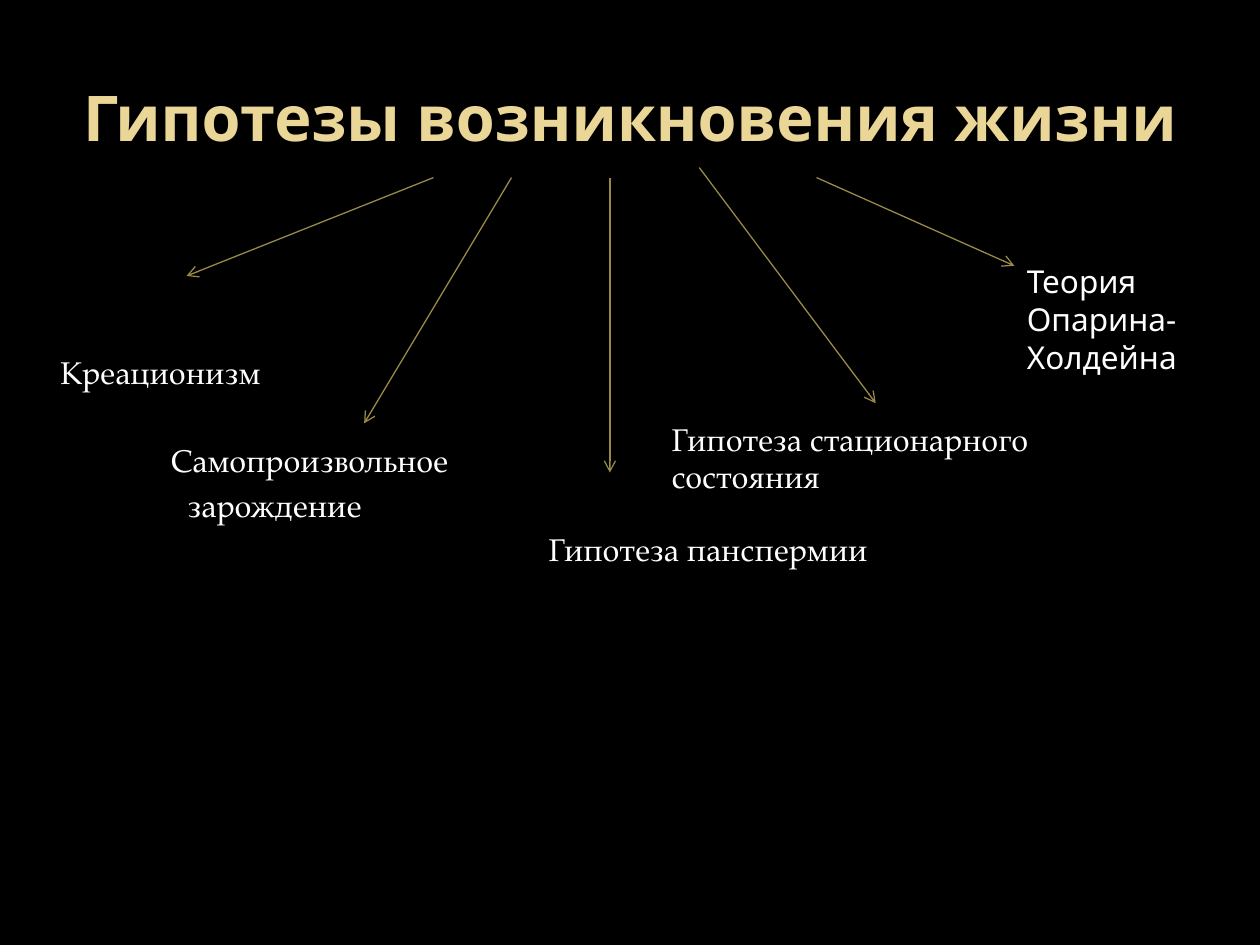
from lxml import etree
from pptx import Presentation
from pptx.dml.color import RGBColor
from pptx.enum.shapes import MSO_CONNECTOR
from pptx.enum.text import MSO_ANCHOR, PP_ALIGN
from pptx.oxml.ns import qn
from pptx.util import Pt

STRAIGHT = MSO_CONNECTOR.STRAIGHT
MIDDLE = MSO_ANCHOR.MIDDLE
CENTER = PP_ALIGN.CENTER

THEME = {
    "background": RGBColor(0x00, 0x00, 0x00),
    "title": RGBColor(0xEA, 0xD6, 0x96),
    "text": RGBColor(0xFF, 0xFF, 0xFF),
    "arrow": RGBColor(0x99, 0x89, 0x46),
    "sans": "Noto Sans",
    "serif": "TeX Gyre Pagella",
    "title_size": Pt(36),
    "label_size": Pt(18),
    "arrow_width": Pt(0.75),
}

TITLE = "Гипотезы возникновения жизни"
TITLE_BOX = (36, 21.6, 648, 90)

# Paragraphs, font, and left, top, width, height in points
LABELS = [
    (["Креационизм"], "serif", (34.5, 202, 130, 24)),
    (["Самопроизвольное", "зарождение"], "serif", (97.5, 252.3, 180, 50)),
    (["Гипотеза панспермии"], "serif", (313.5, 302.6, 210, 24)),
    (["Гипотеза стационарного состояния"], "serif", (383.8, 239.8, 215, 46)),
    (["Теория Опарина-Холдейна"], "sans", (586.8, 149.8, 92.5, 66)),
]
SECOND_LINE_INDENT = Pt(9.5)
SECOND_LINE_SPACE = Pt(3.6)

# Start and end of each arrow in points
ARROWS = [
    ((247.7, 101.5), (106.6, 157.7)),
    ((292.3, 101.5), (208.1, 241.9)),
    ((348.5, 101.5), (348.5, 270)),
    ((399.6, 95.8), (500.4, 230.4)),
    ((466.6, 101.5), (579.6, 151.9)),
]


def set_font(paragraph, family, size, color, bold=False):
    paragraph.font.name = THEME[family]
    paragraph.font.size = size
    paragraph.font.color.rgb = color
    paragraph.font.bold = bold


def add_title(slide):
    title = slide.shapes.title
    title.left, title.top, title.width, title.height = map(Pt, TITLE_BOX)
    title.text_frame.text = TITLE
    title.text_frame.word_wrap = True
    title.text_frame.vertical_anchor = MIDDLE
    paragraph = title.text_frame.paragraphs[0]
    paragraph.alignment = CENTER
    set_font(paragraph, "sans", THEME["title_size"], THEME["title"], bold=True)


def add_label(slide, lines, family, box):
    frame = slide.shapes.add_textbox(*map(Pt, box)).text_frame
    frame.word_wrap = True
    frame.margin_left = frame.margin_right = 0
    frame.margin_top = frame.margin_bottom = 0
    frame.text = "\n".join(lines)
    for paragraph in frame.paragraphs:
        set_font(paragraph, family, THEME["label_size"], THEME["text"])
    for paragraph in frame.paragraphs[1:]:
        paragraph.space_before = SECOND_LINE_SPACE
        paragraph._p.get_or_add_pPr().set("marL", str(SECOND_LINE_INDENT))


def add_arrow(slide, start, end):
    arrow = slide.shapes.add_connector(STRAIGHT, *map(Pt, start + end))
    arrow.line.color.rgb = THEME["arrow"]
    arrow.line.width = THEME["arrow_width"]
    etree.SubElement(arrow.line._get_or_add_ln(), qn("a:tailEnd"), type="arrow")
    etree.SubElement(arrow._element.spPr, qn("a:effectLst"))


def main():
    presentation = Presentation()
    presentation.slide_width, presentation.slide_height = Pt(720), Pt(540)
    slide = presentation.slides.add_slide(presentation.slide_layouts[5])
    slide.background.fill.solid()
    slide.background.fill.fore_color.rgb = THEME["background"]

    add_title(slide)
    for start, end in ARROWS:
        add_arrow(slide, start, end)
    for lines, family, box in LABELS:
        add_label(slide, lines, family, box)

    presentation.save("out.pptx")


if __name__ == "__main__":
    main()
